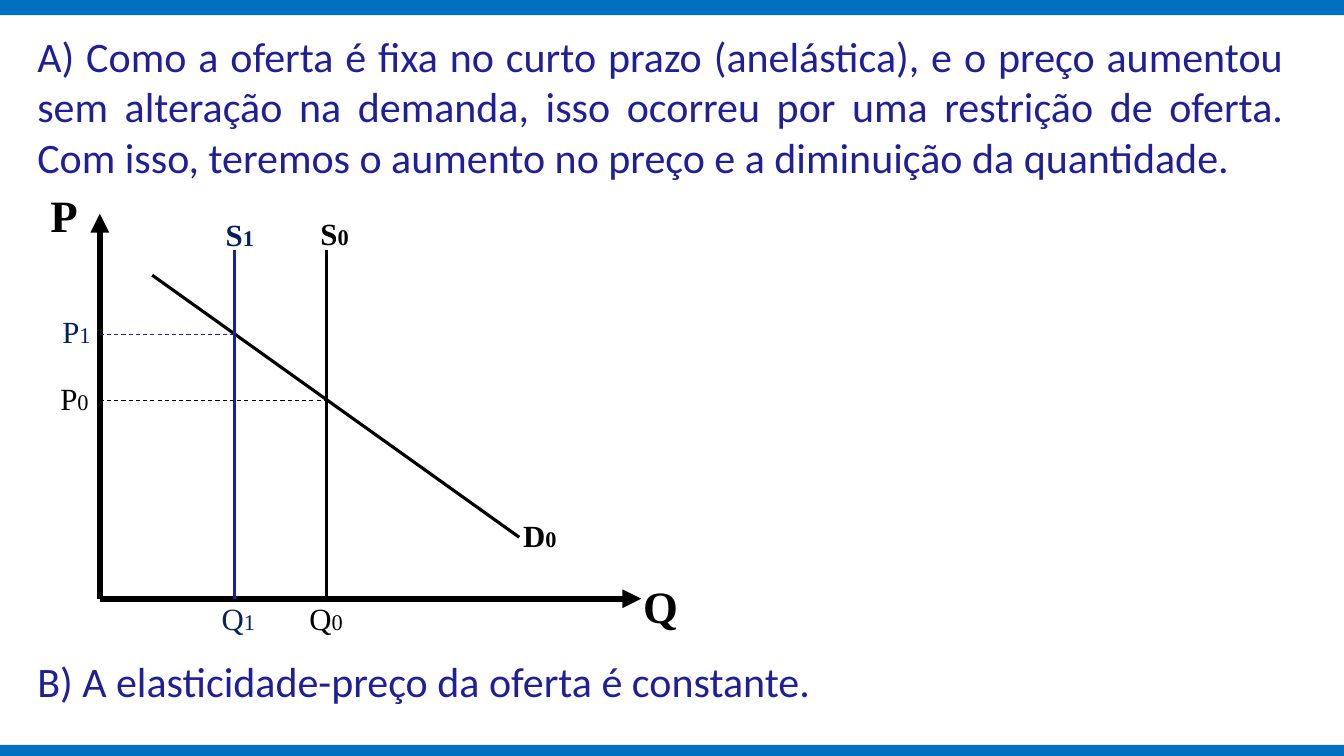
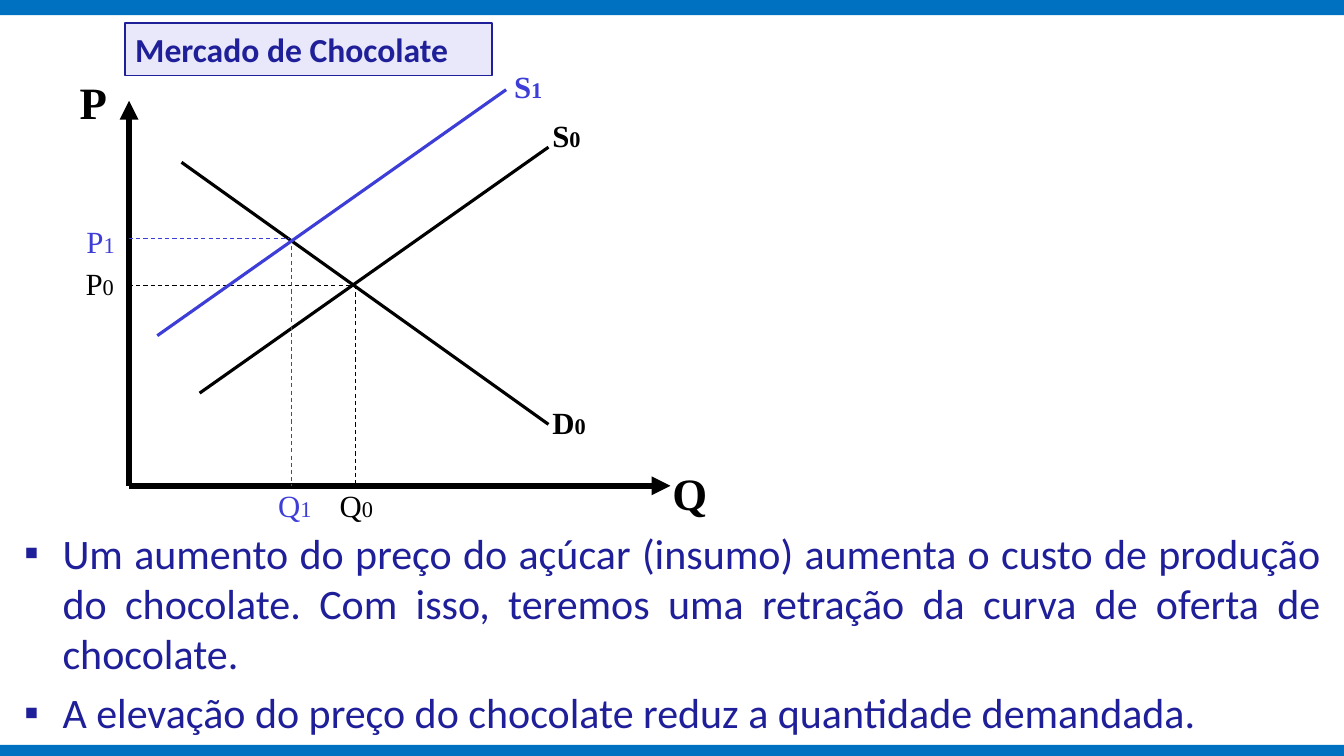
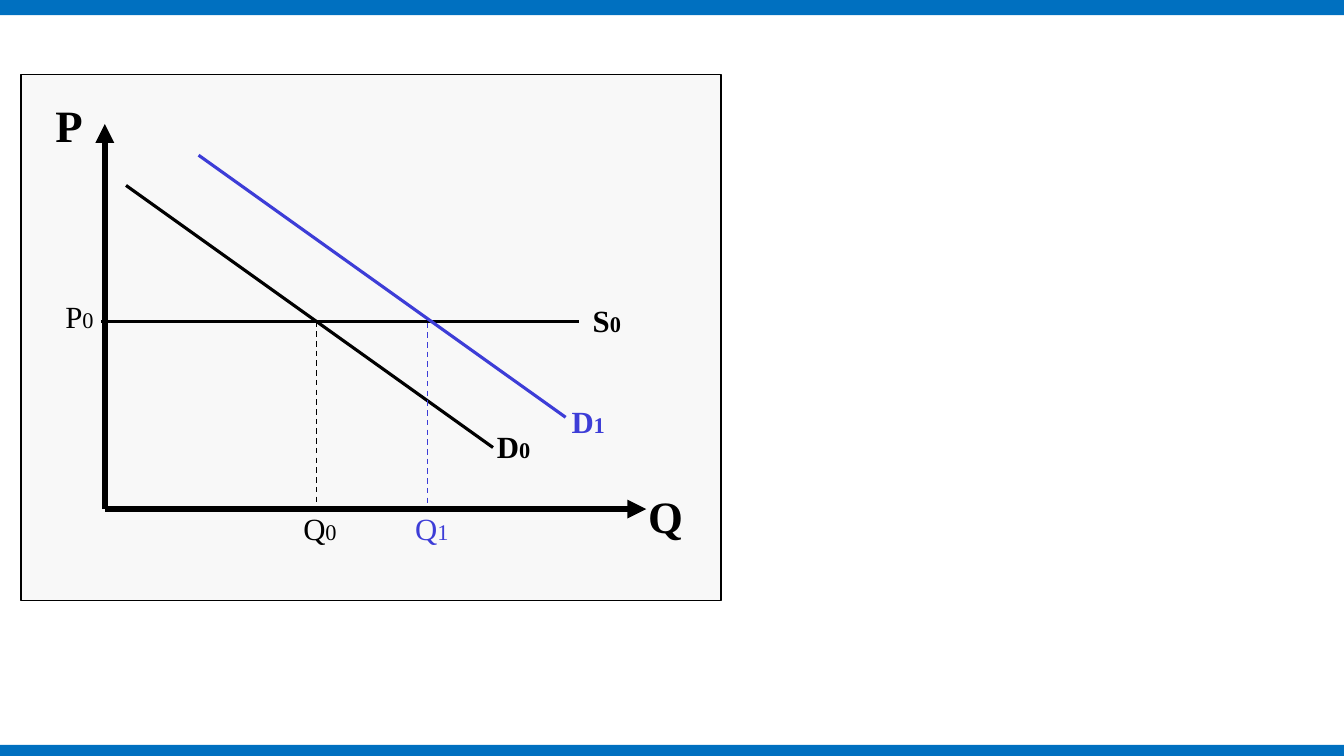
"""Build three slides of supply and demand graphs."""
from lxml.etree import SubElement
from pptx import Presentation
from pptx.dml.color import RGBColor
from pptx.enum.dml import MSO_LINE
from pptx.enum.shapes import MSO_CONNECTOR, MSO_SHAPE
from pptx.enum.text import MSO_ANCHOR, MSO_AUTO_SIZE, PP_ALIGN
from pptx.oxml.ns import qn
from pptx.util import Inches, Pt

BLACK = RGBColor(0x00, 0x00, 0x00)
WHITE = RGBColor(0xFF, 0xFF, 0xFF)
BAND_BLUE = RGBColor(0x00, 0x70, 0xC0)
INDIGO = RGBColor(0x1F, 0x1F, 0x99)
NAVY = RGBColor(0x00, 0x20, 0x60)
VIOLET = RGBColor(0x3D, 0x3D, 0xD7)
LAVENDER = RGBColor(0xE8, 0xE8, 0xFA)
PALE_GREY = RGBColor(0xF8, 0xF8, 0xF8)

DEMAND = (3.64, 2.6)
SUPPLY = (3.46, -2.44)
AXIS_HEIGHT = 3.82
AXIS_WIDTH = 5.37


def draw_line(slide, start, reach, color, weight, dashed=False, arrow=False):
    x, y = start
    dx, dy = reach
    line = slide.shapes.add_connector(
        MSO_CONNECTOR.STRAIGHT, Inches(x), Inches(y), Inches(x + dx), Inches(y + dy))
    line.line.color.rgb = color
    line.line.width = Pt(weight)
    if dashed:
        line.line.dash_style = MSO_LINE.DASH
    properties = line.element.spPr
    if arrow:
        SubElement(properties.find(qn("a:ln")), qn("a:tailEnd"), type="triangle")
    SubElement(properties, qn("a:effectLst"))


def write_label(slide, x, y, text, color=BLACK):
    letter, index = text[0], text[1:]
    bold = letter in "SD" or not index
    width, height = (1.21 if bold else 1.04, 0.47) if index else (0.35, 0.64)
    label = slide.shapes.add_textbox(Inches(x), Inches(y), Inches(width), Inches(height))
    frame = label.text_frame
    frame.word_wrap = True
    frame.auto_size = MSO_AUTO_SIZE.SHAPE_TO_FIT_TEXT
    paragraph = frame.paragraphs[0]
    paragraph.alignment = PP_ALIGN.JUSTIFY
    paragraph.font.name = "Times New Roman"
    paragraph.font.bold = bold
    paragraph.font.color.rgb = color
    for part, size in ((letter, 22 if index else 32), (index, 16)):
        if part:
            run = paragraph.add_run()
            run.text = part
            run.font.size = Pt(size)


deck = Presentation()
deck.slide_width = Inches(13.33)
deck.slide_height = Inches(7.5)
master = deck.slide_master
master.background.fill.solid()
master.background.fill.fore_color.rgb = WHITE

elasticity = deck.slides.add_slide(deck.slide_layouts.get_by_name("Two Content"))
chocolate = deck.slides.add_slide(deck.slide_layouts.get_by_name("Title and Content"))
constant_price = deck.slides.add_slide(deck.slide_layouts.get_by_name("Blank"))

for top, height in ((-0.03, 0.18), (7.39, 0.13)):
    band = elasticity.shapes.add_shape(
        MSO_SHAPE.RECTANGLE, 0, Inches(top), Inches(13.33), Inches(height))
    band.shadow.inherit = False
    band.fill.solid()
    band.fill.fore_color.rgb = BAND_BLUE
    band.line.fill.background()
    master.shapes.element.append(band.element)

unused_title = elasticity.shapes.title.element
unused_title.getparent().remove(unused_title)

heading = chocolate.shapes.title
heading.left, heading.top = Inches(1.24), Inches(0.23)
heading.width, heading.height = Inches(3.64), Inches(0.52)
heading.fill.solid()
heading.fill.fore_color.rgb = LAVENDER
heading.line.color.rgb = INDIGO
heading.line.width = Pt(1)
heading.text_frame.text = "Mercado de Chocolate"
heading.text_frame.auto_size = MSO_AUTO_SIZE.NONE
heading.text_frame.vertical_anchor = MSO_ANCHOR.MIDDLE
heading_line = heading.text_frame.paragraphs[0]
heading_line.alignment = PP_ALIGN.JUSTIFY
heading_line.font.name = "Calibri"
heading_line.font.size = Pt(24)
heading_line.font.bold = True
heading_line.font.color.rgb = INDIGO

panel = constant_price.shapes.add_shape(
    MSO_SHAPE.RECTANGLE, Inches(0.21), Inches(0.74), Inches(6.94), Inches(5.22))
panel.shadow.inherit = False
panel.fill.solid()
panel.fill.fore_color.rgb = PALE_GREY
panel.line.color.rgb = BLACK
panel.line.width = Pt(1)

answers = (
    (elasticity.placeholders[1], (0.27, 0.25, 12.57, 1.1), False, (
        "A) Como a oferta é fixa no curto prazo (anelástica), e o preço aumentou "
        "sem alteração na demanda, isso ocorreu por uma restrição de oferta. "
        "Com isso, teremos o aumento no preço e a diminuição da quantidade.",)),
    (elasticity.placeholders[2], (0.27, 6.45, 12.57, 0.75), False, (
        "B) A elasticidade-preço da oferta é constante.",)),
    (chocolate.placeholders[1], (0.14, 5.18, 13.07, 1.6), True, (
        "Um aumento do preço do açúcar (insumo) aumenta o custo de produção "
        "do chocolate. Com isso, teremos uma retração da curva de oferta de chocolate.",
        "A elevação do preço do chocolate reduz a quantidade demandada.")),
)
for answer, box, bulleted, texts in answers:
    answer.left, answer.top, answer.width, answer.height = map(Inches, box)
    frame = answer.text_frame
    frame.text = "\n".join(texts)
    frame.auto_size = MSO_AUTO_SIZE.NONE
    frame.vertical_anchor = MSO_ANCHOR.TOP
    for paragraph in frame.paragraphs:
        paragraph.alignment = PP_ALIGN.JUSTIFY
        paragraph.space_before = Pt(6 if bulleted else 0)
    indent = Inches(0.38) if bulleted else 0
    for settings in answer.element.iter(qn("a:pPr")):
        settings.set("marL", str(indent))
        settings.set("indent", str(-indent))
        if bulleted:
            bullet_color = SubElement(settings, qn("a:buClr"))
            SubElement(bullet_color, qn("a:srgbClr"), val=str(INDIGO))
            SubElement(settings, qn("a:buChar"), char="▪")
        else:
            SubElement(settings, qn("a:buNone"))
    for paragraph in frame.paragraphs:
        paragraph.font.name = "Calibri"
        paragraph.font.size = Pt(30)
        paragraph.font.color.rgb = INDIGO

graphs = (
    (elasticity, (0.99, 5.94), (
        ((1.51, 2.73), DEMAND, BLACK, 2.25),
        ((3.24, 5.94), (0, -3.46), BLACK, 2.25),
        ((0.99, 3.97), (2.25, 0), BLACK, 0.75, True),
        ((2.33, 5.94), (0, -3.46), INDIGO, 2.25),
        ((0.99, 3.32), (1.34, 0), INDIGO, 0.75, True),
    ), (
        (3.08, 2.08, "S0"), (5.09, 5.08, "D0"), (0.5, 3.72, "P0"), (2.97, 5.9, "Q0"),
        (2.14, 2.09, "S1", NAVY), (0.52, 3.05, "P1", NAVY), (2.1, 5.9, "Q1", NAVY),
    )),
    (chocolate, (1.28, 4.82), (
        ((1.8, 1.61), DEMAND, BLACK, 2.25),
        ((1.98, 3.9), SUPPLY, BLACK, 2.25),
        ((1.28, 2.83), (2.25, 0), BLACK, 0.75, True),
        ((3.53, 2.83), (0, 1.99), BLACK, 0.75, True),
        ((1.56, 3.33), SUPPLY, VIOLET, 2.25),
        ((1.28, 2.37), (1.58, 0), VIOLET, 0.75, True),
        ((2.89, 2.37), (0, 2.45), VIOLET, 0.75, True),
    ), (
        (5.38, 1.11, "S0"), (5.38, 3.96, "D0"), (0.75, 2.58, "P0"), (3.27, 4.78, "Q0"),
        (5, 0.62, "S1", VIOLET), (2.66, 4.78, "Q1", VIOLET), (0.76, 2.16, "P1", VIOLET),
    )),
    (constant_price, (1.04, 5.05), (
        ((1.25, 1.84), DEMAND, BLACK, 2.25),
        ((1, 3.19), (4.74, 0), BLACK, 2.25),
        ((3.14, 3.19), (0, 1.82), BLACK, 1, True),
        ((1.97, 1.54), DEMAND, VIOLET, 2.25),
        ((4.24, 3.2), (0, 1.83), VIOLET, 1, True),
    ), (
        (5.78, 2.94, "S0"), (4.83, 4.19, "D0"), (0.55, 2.9, "P0"), (2.91, 5.01, "Q0"),
        (5.57, 3.95, "D1", VIOLET), (4.02, 5.01, "Q1", VIOLET),
    )),
)
for slide, origin, lines, labels in graphs:
    for reach in ((0, -AXIS_HEIGHT), (AXIS_WIDTH, 0)):
        draw_line(slide, origin, reach, BLACK, 4.5, arrow=True)
    for line in lines:
        draw_line(slide, *line)
    write_label(slide, origin[0] - 0.59, origin[1] - 4.13, "P")
    write_label(slide, origin[0] + 5.29, origin[1] - 0.25, "Q")
    for label in labels:
        write_label(slide, *label)

deck.save("out.pptx")
